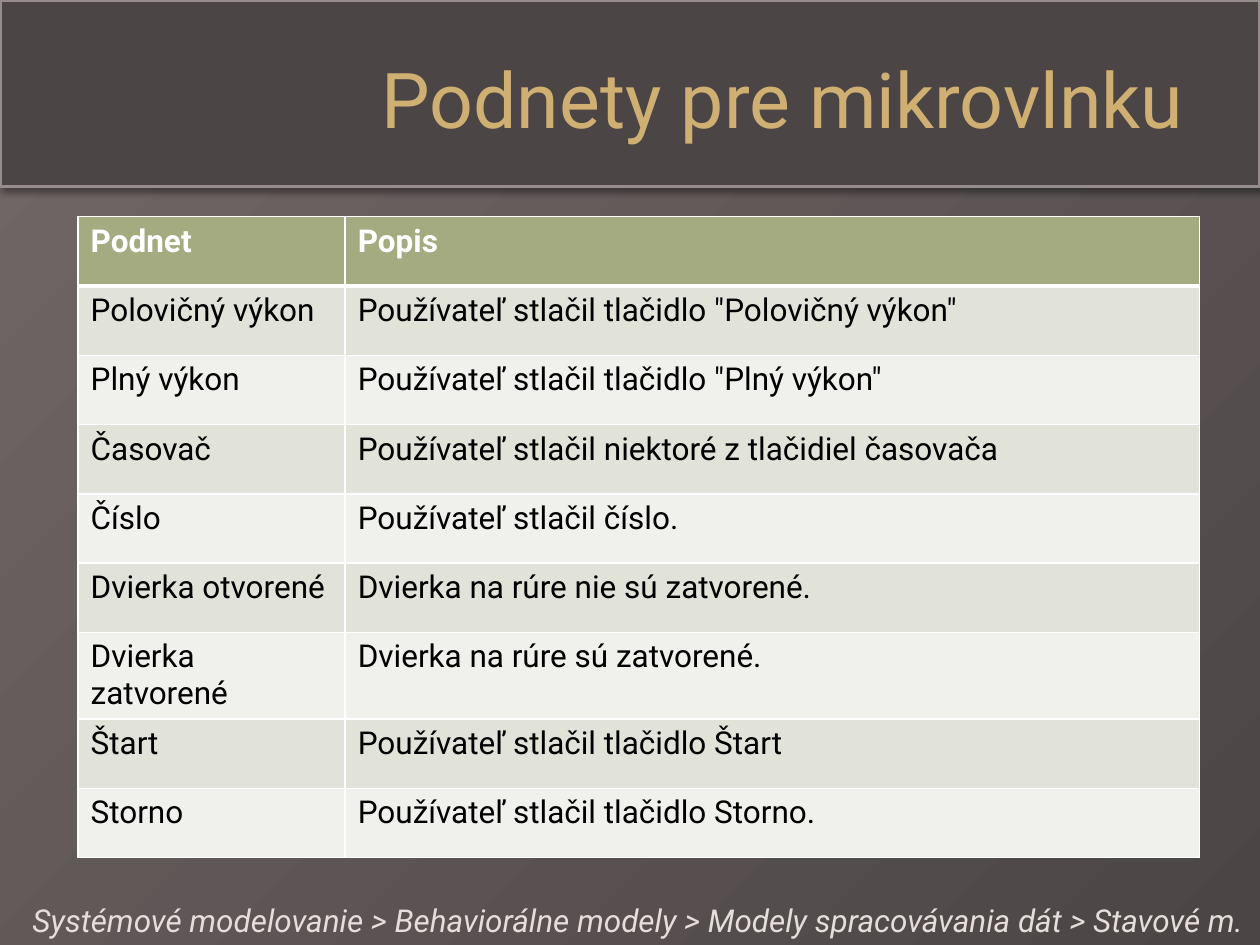
"""Build the slide that lists the stimuli of a microwave oven."""
from pptx import Presentation
from pptx.dml.color import RGBColor
from pptx.enum.shapes import MSO_SHAPE
from pptx.enum.text import MSO_ANCHOR, MSO_AUTO_SIZE, PP_ALIGN
from pptx.oxml import parse_xml
from pptx.oxml.ns import nsdecls
from pptx.util import Inches, Pt

RECTANGLE = MSO_SHAPE.RECTANGLE
MIDDLE = MSO_ANCHOR.MIDDLE
RIGHT = PP_ALIGN.RIGHT
NO_FIT, GROW = MSO_AUTO_SIZE.NONE, MSO_AUTO_SIZE.SHAPE_TO_FIT_TEXT

TITLE = "Podnety pre mikrovlnku"
BREADCRUMB = " > ".join(
    ["Systémové modelovanie", "Behaviorálne modely", "Modely spracovávania dát", "Stavové m."]
)
STIMULI = [
    ("Podnet", "Popis"),
    ("Polovičný výkon", 'Používateľ stlačil tlačidlo "Polovičný výkon"'),
    ("Plný výkon", 'Používateľ stlačil tlačidlo "Plný výkon"'),
    ("Časovač", "Používateľ stlačil niektoré z tlačidiel časovača"),
    ("Číslo", "Používateľ stlačil číslo."),
    ("Dvierka otvorené", "Dvierka na rúre nie sú zatvorené."),
    ("Dvierka zatvorené", "Dvierka na rúre sú zatvorené."),
    ("Štart", "Používateľ stlačil tlačidlo Štart"),
    ("Storno", "Používateľ stlačil tlačidlo Storno."),
]
COLUMN_WIDTHS = (2.12, 6.78)
ROW_HEIGHT = 0.55
THEME = {
    "font": "Roboto",
    "title_size": 44,
    "body_size": 18,
    "title": "D0AF72",
    "breadcrumb": "E6DEDB",
    "band": "4C4545",
    "band_line": "968C8C",
    "gradient": [(0, "4C4545"), (100, "726868"), (100, "C0BABA")],
    "header": "A5AB81",
    "header_text": "FFFFFF",
    "body_text": "000000",
    "stripes": ("F0F1ED", "E1E2D8"),
    "border": "FFFFFF",
    "shadow": "000000",
}


def color(name):
    return RGBColor.from_string(THEME[name])


def style_text(text_frame, size, color_name, bold=False, italic=False):
    for paragraph in text_frame.paragraphs:
        for run in paragraph.runs:
            font = run.font
            font.name, font.size = THEME["font"], Pt(THEME[size])
            font.bold, font.italic = bold, italic
            font.color.rgb = color(color_name)


def set_background(slide):
    slide.background.fill.gradient()
    gradient = slide.element.xpath(".//p:bgPr/a:gradFill")[0]
    stops = "".join(
        f'<a:gs pos="{position * 1000}"><a:srgbClr val="{value}"/></a:gs>'
        for position, value in THEME["gradient"]
    )
    gradient.getparent().replace(gradient, parse_xml(
        f'<a:gradFill {nsdecls("a")} rotWithShape="1"><a:gsLst>{stops}</a:gsLst>'
        '<a:path path="circle"><a:fillToRect l="100000" t="100000"/></a:path></a:gradFill>'
    ))


def add_title(slide):
    band = slide.shapes.add_shape(RECTANGLE, 0, 0, Inches(10), Inches(1.48))
    band.fill.solid()
    band.fill.fore_color.rgb = color("band")
    band.line.color.rgb = color("band_line")
    band.line.width = Pt(2)
    band.element.spPr.append(parse_xml(
        f'<a:effectLst {nsdecls("a")}><a:outerShdw blurRad="{Pt(4)}" dist="{Pt(3)}" '
        f'dir="2700000" algn="tl" rotWithShape="0"><a:srgbClr val="{THEME["shadow"]}">'
        '<a:alpha val="40000"/></a:srgbClr></a:outerShdw></a:effectLst>'
    ))
    title = slide.shapes.title
    title.element.addprevious(band.element)
    title.left, title.top = Inches(0.5), Inches(0.3)
    title.width, title.height = Inches(9), Inches(0.95)
    text_frame = title.text_frame
    text_frame.text = TITLE
    text_frame.auto_size = NO_FIT
    text_frame.vertical_anchor = MIDDLE
    text_frame.paragraphs[0].alignment = RIGHT
    style_text(text_frame, "title_size", "title")


def set_borders(cell, top, bottom):
    properties = cell._tc.get_or_add_tcPr()
    for index, (side, width) in enumerate([("L", 1), ("R", 1), ("T", top), ("B", bottom)]):
        properties.insert(index, parse_xml(
            f'<a:ln{side} {nsdecls("a")} w="{Pt(width)}"><a:solidFill>'
            f'<a:srgbClr val="{THEME["border"]}"/></a:solidFill></a:ln{side}>'
        ))


def add_stimuli_table(slide):
    frame = slide.shapes.add_table(
        len(STIMULI), len(COLUMN_WIDTHS), Inches(0.62), Inches(1.72),
        Inches(sum(COLUMN_WIDTHS)), Inches(ROW_HEIGHT * len(STIMULI)),
    )
    table = frame.table
    for column, width in zip(table.columns, COLUMN_WIDTHS):
        column.width = Inches(width)
    for row_index, texts in enumerate(STIMULI):
        table.rows[row_index].height = Inches(ROW_HEIGHT)
        is_header = row_index == 0
        fill = THEME["header"] if is_header else THEME["stripes"][row_index % 2]
        for column_index, text in enumerate(texts):
            cell = table.cell(row_index, column_index)
            cell.text_frame.text = text
            text_color = "header_text" if is_header else "body_text"
            style_text(cell.text_frame, "body_size", text_color, bold=is_header)
            cell.fill.solid()
            cell.fill.fore_color.rgb = RGBColor.from_string(fill)
            set_borders(cell, 3 if row_index == 1 else 1, 3 if is_header else 1)


def add_breadcrumb(slide):
    box = slide.shapes.add_textbox(Inches(0.16), Inches(7.1), Inches(9.84), Inches(0.4))
    text_frame = box.text_frame
    text_frame.word_wrap = True
    text_frame.auto_size = GROW
    text_frame.text = BREADCRUMB
    style_text(text_frame, "body_size", "breadcrumb", italic=True)


def main():
    presentation = Presentation()
    presentation.slide_width, presentation.slide_height = Inches(10), Inches(7.5)
    slide = presentation.slides.add_slide(presentation.slide_layouts[5])
    set_background(slide)
    add_title(slide)
    add_stimuli_table(slide)
    add_breadcrumb(slide)
    presentation.save("out.pptx")


if __name__ == "__main__":
    main()
